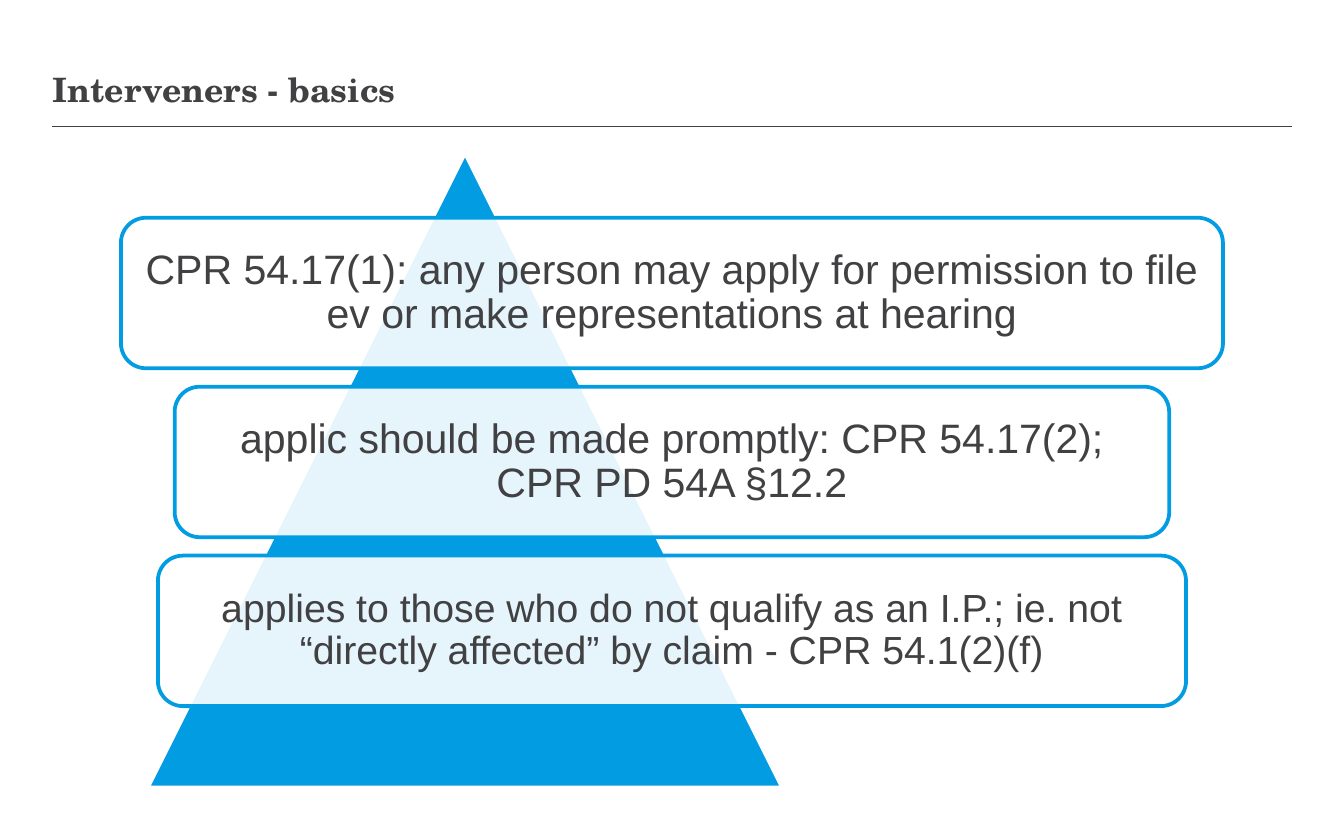
"""Build the slide on the basics of interveners."""
import pptx
import pptx.util
import pptx.dml.color
import pptx.enum.shapes
import pptx.enum.text
import pptx.oxml
import pptx.oxml.ns

Inches, Pt = pptx.util.Inches, pptx.util.Pt
RGB = pptx.dml.color.RGBColor
SHAPE = pptx.enum.shapes.MSO_SHAPE
ALIGN = pptx.enum.text.PP_ALIGN
ANCHOR = pptx.enum.text.MSO_ANCHOR
GREY, BLUE, WHITE = RGB(0x41, 0x40, 0x42), RGB(0x02, 0x9C, 0xE2), RGB(255, 255, 255)

TITLE = "Interveners - basics"
RULES = [
    ("CPR 54.17(1): any person may apply for permission to file ev or make "
     "representations at hearing", 8.2, 22),
    ("applic should be made promptly: CPR 54.17(2); CPR PD 54A §12.2", 7.4, 22),
    ("applies to those who do not qualify as an I.P.; ie. not “directly affected” "
     "by claim - CPR 54.1(2)(f)", 7.65, 21),
]
WIDE, HIGH = 10, 6.25
EDGE = 0.39
TOP, TALL, STEP = 1.62, 1.12, 1.257


def apply(item, values):
    for name, value in values.items():
        setattr(item, name, value)


def write(shape, text, pad, anchor, para, font):
    frame = shape.text_frame
    sides = ("left", "top", "right", "bottom")
    apply(frame, {f"margin_{side}": Inches(pad) for side in sides})
    apply(frame, {"word_wrap": True, "vertical_anchor": anchor})
    line = frame.paragraphs[0]
    line.text = text
    apply(line, para)
    apply(line.font, font)
    line.font.color.rgb = GREY


def draw(slide, kind, box, fill, edge):
    shape = slide.shapes.add_shape(kind, *map(Inches, box))
    shape.shadow.inherit = False
    shape.fill.solid()
    shape.fill.fore_color.rgb = fill
    shape.line.color.rgb = edge
    shape.line.width = Pt(2)
    return shape


def fade(shape, share):
    color = shape.fill._xPr.find(".//" + pptx.oxml.ns.qn("a:srgbClr"))
    space = pptx.oxml.ns.nsdecls("a")
    color.append(pptx.oxml.parse_xml(f'<a:alpha {space} val="{share * 1000}"/>'))


def main():
    deck = pptx.Presentation()
    apply(deck, {"slide_width": Inches(WIDE), "slide_height": Inches(HIGH)})
    slide = deck.slides.add_slide(deck.slide_layouts[6])

    ends = map(Inches, (EDGE, 0.94, WIDE - EDGE, 0.94))
    rule = slide.shapes.add_connector(pptx.enum.shapes.MSO_CONNECTOR.STRAIGHT, *ends)
    rule.line.color.rgb = GREY
    rule.line.width = Pt(0.75)
    effect = f'<a:effectLst {pptx.oxml.ns.nsdecls("a")}/>'
    rule._element.spPr.append(pptx.oxml.parse_xml(effect))

    draw(slide, SHAPE.ISOSCELES_TRIANGLE, (1.1, 1.14, 4.72, 4.72), BLUE, WHITE)
    for row, (text, width, size) in enumerate(RULES):
        box = ((WIDE - width) / 2, TOP + row * STEP, width, TALL)
        card = draw(slide, SHAPE.ROUNDED_RECTANGLE, box, WHITE, BLUE)
        fade(card, 90)
        write(card, text, 0.09, ANCHOR.MIDDLE,
              {"alignment": ALIGN.CENTER, "line_spacing": 0.9},
              {"name": "Arial", "size": Pt(size)})

    head = slide.shapes.add_textbox(*map(Inches, (EDGE, 0.51, 6.79, 0.35)))
    write(head, TITLE, 0, ANCHOR.TOP, {"alignment": ALIGN.LEFT},
          {"name": "TeX Gyre Schola", "size": Pt(18), "bold": True})
    deck.save("out.pptx")


if __name__ == "__main__":
    main()
